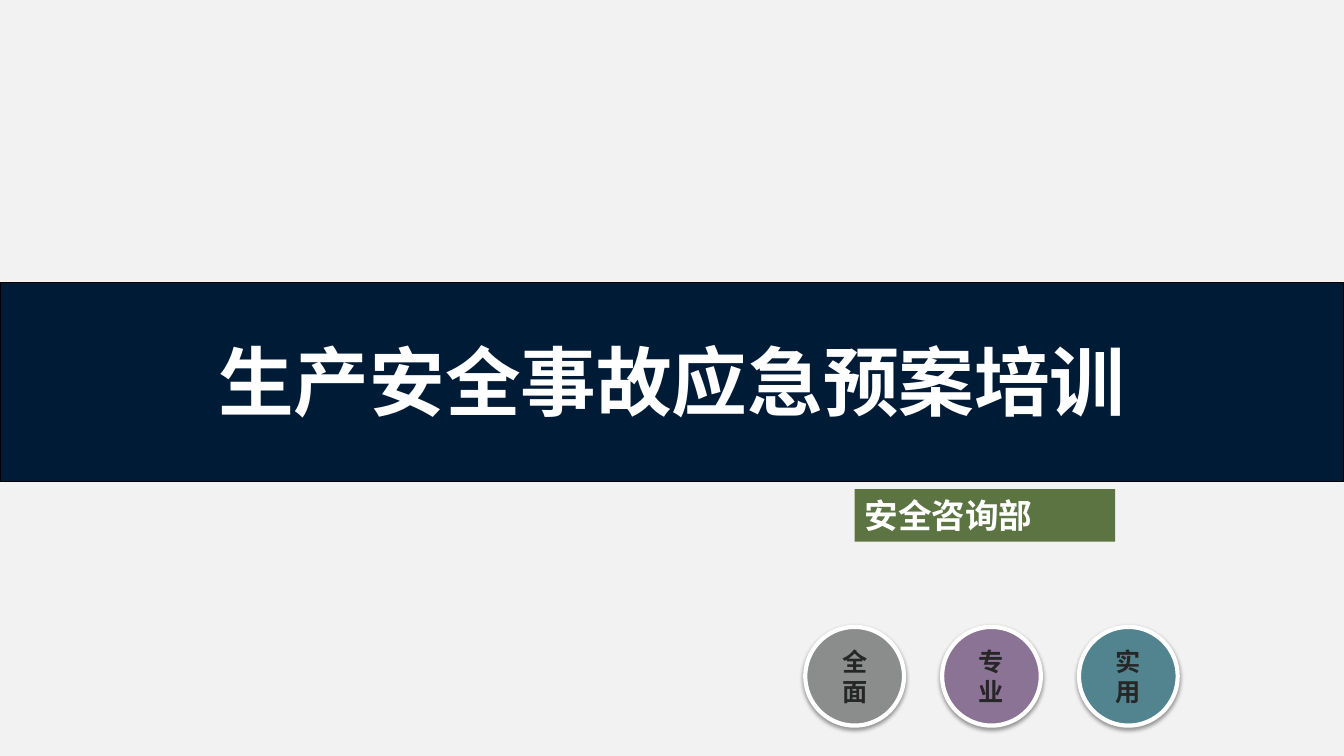
"""Build the cover slide of an emergency plan training deck."""
from lxml import etree
from pptx import Presentation
from pptx.dml.color import RGBColor
from pptx.enum.shapes import MSO_SHAPE
from pptx.enum.text import MSO_ANCHOR, PP_ALIGN
from pptx.oxml import parse_xml
from pptx.oxml.ns import nsdecls, qn
from pptx.util import Pt

RECTANGLE, OVAL = MSO_SHAPE.RECTANGLE, MSO_SHAPE.OVAL
TOP, MIDDLE = MSO_ANCHOR.TOP, MSO_ANCHOR.MIDDLE
CENTER, JUSTIFY = PP_ALIGN.CENTER, PP_ALIGN.JUSTIFY
CJK_FONT = "Noto Sans CJK SC"
COLORS = {
    "background": "F2F2F2", "band": "001B36", "outline": "000000",
    "label": "5C7441", "white": "FFFFFF", "dark": "262626",
    "gray": "8B8D8C", "purple": "8B7396", "teal": "51848E",
}
SHADOW = (
    f'<a:effectLst {nsdecls("a")}>'
    '<a:outerShdw blurRad="39370" dist="20320" dir="5400000" rotWithShape="0">'
    '<a:srgbClr val="000000"><a:alpha val="38000"/></a:srgbClr>'
    '</a:outerShdw></a:effectLst>'
)


def add_filled(kind, left, top, width, height, fill, line=None, line_width=0):
    shape = page.shapes.add_shape(kind, Pt(left), Pt(top), Pt(width), Pt(height))
    shape.shadow.inherit = False
    shape.fill.solid()
    shape.fill.fore_color.rgb = RGBColor.from_string(COLORS[fill])
    if line:
        shape.line.color.rgb = RGBColor.from_string(COLORS[line])
        shape.line.width = Pt(line_width)
    else:
        shape.line.fill.background()
    return shape


def write(shape, text, size, color, align, anchor, font=CJK_FONT):
    frame = shape.text_frame
    frame.word_wrap = True
    frame.vertical_anchor = anchor
    para = frame.paragraphs[0]
    para.alignment = align
    span = para.add_run()
    span.text = text
    span.font.size = Pt(size)
    span.font.bold = True
    span.font.color.rgb = RGBColor.from_string(COLORS[color])
    span.font.name = font
    east_asian = etree.SubElement(span.font._element, qn("a:ea"))
    east_asian.set("typeface", CJK_FONT)


deck = Presentation()
deck.slide_width, deck.slide_height = Pt(960), Pt(540)
page = deck.slides.add_slide(deck.slide_layouts[6])
page.background.fill.solid()
page.background.fill.fore_color.rgb = RGBColor.from_string(COLORS["background"])

add_filled(RECTANGLE, 0, 202, 960, 142, "band", "outline", 0.75)
title = page.shapes.add_textbox(Pt(146.5), Pt(236), Pt(667), Pt(72.7))
write(title, "生产安全事故应急预案培训", 54, "white", CENTER, TOP)

label = add_filled(RECTANGLE, 610.5, 349.3, 186, 37.5, "label")
write(label, "安全咨询部", 24, "white", JUSTIFY, MIDDLE)

badges = [("全面", "gray"), ("专业", "purple"), ("实用", "teal")]
for index, (word, fill) in enumerate(badges):
    badge = add_filled(OVAL, 575.2 + index * 97.75, 447.8, 70.5, 70.5, fill, "white", 3)
    properties = badge._element.spPr
    properties.replace(properties.find(qn("a:effectLst")), parse_xml(SHADOW))
    write(badge, word, 18, "dark", CENTER, MIDDLE, "Arial")

deck.save("out.pptx")
